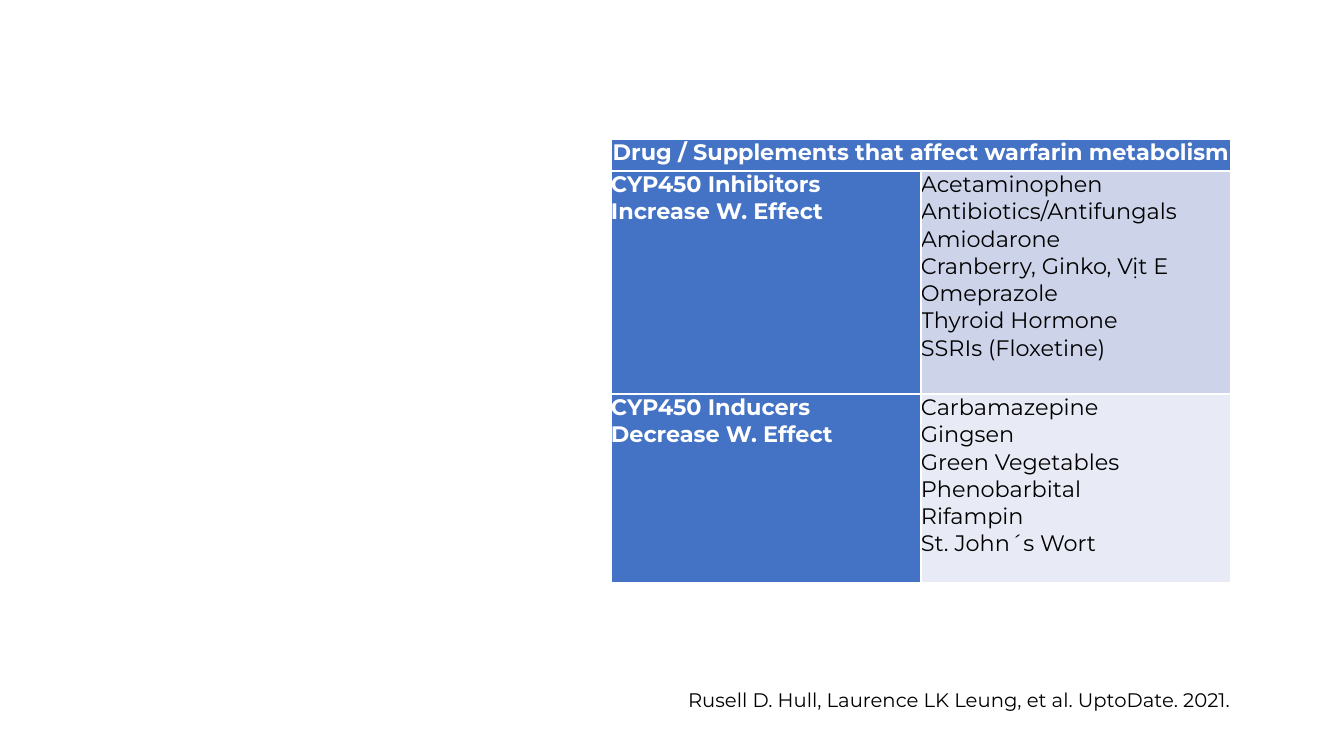
import lxml.etree
import pptx
import pptx.dml.color
import pptx.enum.text
import pptx.oxml.ns
import pptx.util

EMU_PER_PX = 914400 / 100.8
FONT = "Montserrat"
WHITE = pptx.dml.color.RGBColor(0xFF, 0xFF, 0xFF)
BLACK = pptx.dml.color.RGBColor(0x00, 0x00, 0x00)
BLUE = pptx.dml.color.RGBColor(0x44, 0x72, 0xC4)
PALE_BLUE = pptx.dml.color.RGBColor(0xCD, 0xD4, 0xEA)
PALER_BLUE = pptx.dml.color.RGBColor(0xE8, 0xEB, 0xF5)

HEADING = "Drug / Supplements that affect warfarin metabolism"
DRUG_GROUPS = [
    (
        ["CYP450 Inhibitors", "Increase W. Effect"],
        ["Acetaminophen", "Antibiotics/Antifungals", "Amiodarone",
         "Cranberry, Ginko, Vịt E", "Omeprazole", "Thyroid Hormone",
         "SSRIs (Floxetine)"],
        PALE_BLUE,
    ),
    (
        ["CYP450 Inducers", "Decrease W. Effect"],
        ["Carbamazepine", "Gingsen", "Green Vegetables", "Phenobarbital",
         "Rifampin", "St. John´s Wort"],
        PALER_BLUE,
    ),
]
ROW_HEIGHTS = [32, 223, 189]
CITATION = "Rusell D. Hull, Laurence LK Leung, et al. UptoDate. 2021."


def px(length):
    return pptx.util.Emu(round(length * EMU_PER_PX))


def write(frame, lines, size=16, color=BLACK, bold=False,
          align=pptx.enum.text.PP_ALIGN.LEFT):
    paragraph = frame.paragraphs[0]
    paragraph.alignment = align
    for index, line in enumerate(lines):
        if index:
            paragraph.add_line_break()
        run = paragraph.add_run()
        run.text = line
        run.font.name = FONT
        run.font.size = pptx.util.Pt(size)
        run.font.bold = bold
        run.font.color.rgb = color


def add_borders(cell):
    properties = cell._tc.get_or_add_tcPr()
    for side in ("a:lnL", "a:lnR", "a:lnT", "a:lnB"):
        border = lxml.etree.SubElement(
            properties, pptx.oxml.ns.qn(side), w=str(pptx.util.Pt(1)))
        fill = lxml.etree.SubElement(border, pptx.oxml.ns.qn("a:solidFill"))
        lxml.etree.SubElement(
            fill, pptx.oxml.ns.qn("a:srgbClr"), val=str(WHITE))


def fill_cell(cell, lines, fill, **text_format):
    cell.margin_left = cell.margin_right = 0
    cell.margin_top = cell.margin_bottom = 0
    add_borders(cell)
    cell.fill.solid()
    cell.fill.fore_color.rgb = fill
    write(cell.text_frame, lines, **text_format)


def add_drug_table(slide, left, top, width):
    drugs = slide.shapes.add_table(
        len(ROW_HEIGHTS), 2, px(left), px(top), px(width),
        px(sum(ROW_HEIGHTS))).table
    for column in drugs.columns:
        column.width = px(width / 2)
    for row, height in zip(drugs.rows, ROW_HEIGHTS):
        row.height = px(height)

    heading = drugs.cell(0, 0)
    heading.merge(drugs.cell(0, 1))
    fill_cell(heading, [HEADING], BLUE, color=WHITE, bold=True,
              align=pptx.enum.text.PP_ALIGN.CENTER)
    for row, (effect, names, shade) in enumerate(DRUG_GROUPS, start=1):
        fill_cell(drugs.cell(row, 0), effect, BLUE, color=WHITE, bold=True)
        fill_cell(drugs.cell(row, 1), names, shade)


def add_citation(slide, left, top, width, height):
    citation = slide.shapes.add_textbox(
        px(left), px(top), px(width), px(height)).text_frame
    citation.word_wrap = False
    citation.auto_size = pptx.enum.text.MSO_AUTO_SIZE.SHAPE_TO_FIT_TEXT
    citation.margin_left = citation.margin_right = px(5)
    citation.margin_top = citation.margin_bottom = px(5)
    write(citation, [CITATION], size=14)


def main():
    deck = pptx.Presentation()
    deck.slide_width = px(1344)
    deck.slide_height = px(756)
    slide = deck.slides.add_slide(deck.slide_layouts[6])
    add_drug_table(slide, 611, 139, 620)
    add_citation(slide, 683, 683, 563, 34)
    deck.save("out.pptx")


if __name__ == "__main__":
    main()
